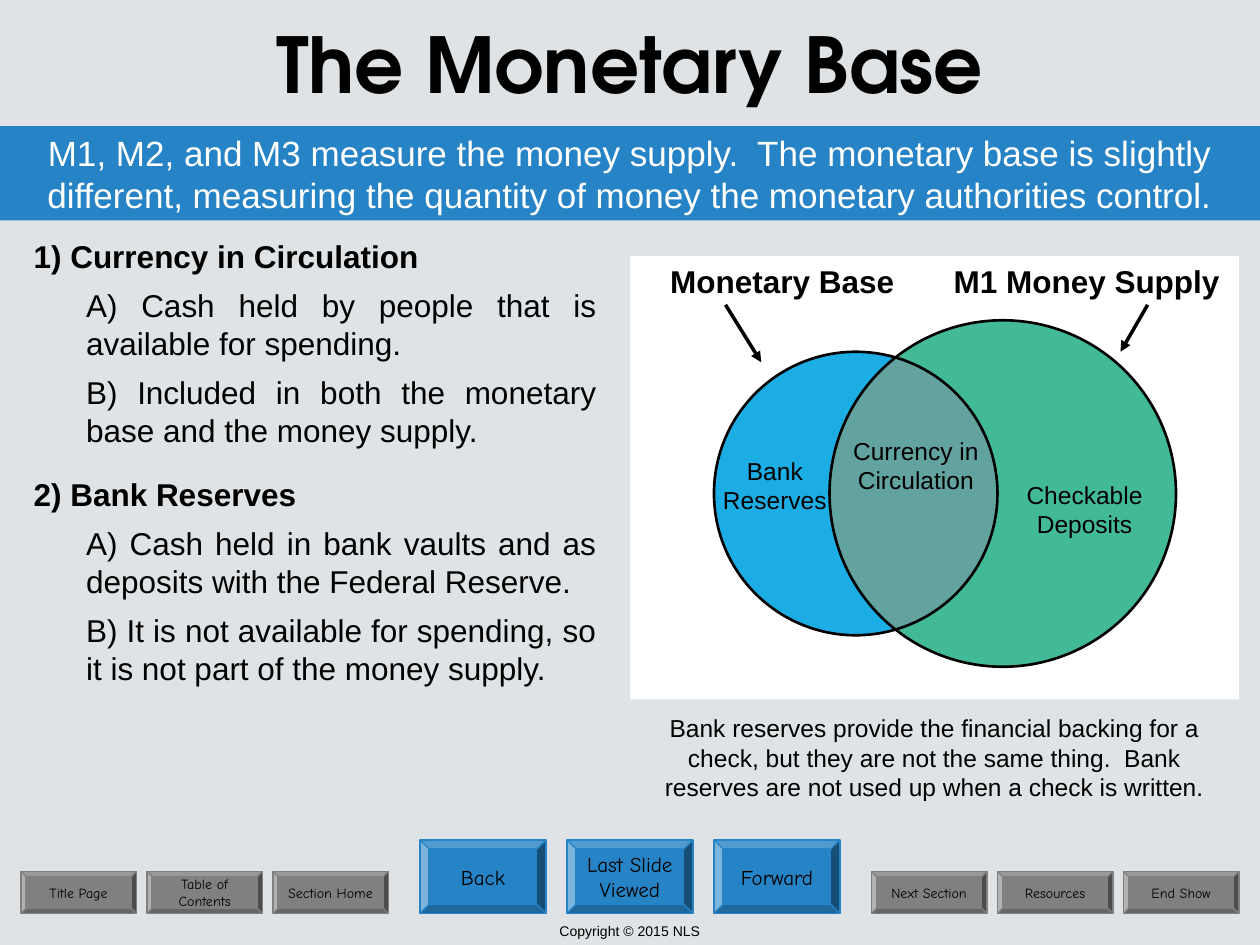
from math import acos, cos, sin

from lxml.etree import SubElement
from pptx import Presentation
from pptx.dml.color import RGBColor
from pptx.enum.shapes import MSO_CONNECTOR, MSO_SHAPE
from pptx.enum.text import MSO_ANCHOR, MSO_AUTO_SIZE, PP_ALIGN
from pptx.oxml.ns import qn
from pptx.util import Pt

BACKGROUND = RGBColor(0xDF, 0xE3, 0xE5)
BLUE = RGBColor(0x26, 0x83, 0xC6)
GRAY = RGBColor(0x80, 0x80, 0x80)
BLACK = RGBColor(0, 0, 0)
WHITE = RGBColor(0xFF, 0xFF, 0xFF)
RESERVES_BLUE = RGBColor(0x1C, 0xAD, 0xE4)
DEPOSITS_GREEN = RGBColor(0x42, 0xBA, 0x97)
OVERLAP_TEAL = RGBColor(0x62, 0xA3, 0x9F)

# Content
TITLE = "The Monetary Base"
BANNER = ("M1, M2, and M3 measure the money supply.  The monetary base is slightly "
          "different, measuring the quantity of money the monetary authorities control.")
SECTIONS = [
    ("1) Currency in Circulation",
     ["A) Cash held by people that is available for spending.",
      "B) Included in both the monetary base and the money supply."]),
    ("2) Bank Reserves",
     ["A) Cash held in bank vaults and as deposits with the Federal Reserve.",
      "B) It is not available for spending, so it is not part of the money supply."]),
]
CAPTION = ("Bank reserves provide the financial backing for a check, but they are not the "
           "same thing.  Bank reserves are not used up when a check is written.")
COPYRIGHT = "Copyright © 2015 NLS"

# Diagram: (text, left, top, width, height)
HEADINGS = [("Monetary Base", 360, 146.2, 174, 29),
            ("M1 Money Supply", 534, 146.2, 174, 29)]
LABELS = [("Bank Reserves", 396, 257, 93.6, 41),
          ("Checkable Deposits", 573, 270.7, 93.6, 41),
          ("Currency in Circulation", 476.6, 245.5, 93.6, 41)]
CENTER_Y = 282
CIRCLES = [(489, 81, RESERVES_BLUE), (573, 99, DEPOSITS_GREEN)]  # centre x, radius, fill
ARROWS = [(414.6, 174.2, 435, 207), (655.8, 174.2, 640.3, 201)]

# Navigation: look of the buttons, then groups of (first left, labels)
SMALL = {"top": 498, "width": 66, "height": 24, "pitch": 72, "color": GRAY, "size": Pt(8)}
LARGE = {"top": 480, "width": 72, "height": 42, "pitch": 84, "color": BLUE, "size": Pt(12)}
BUTTON_GROUPS = [
    (LARGE, 240, [["Back"], ["Last Slide", "Viewed"], ["Forward"]]),
    (SMALL, 12, [["Title Page"], ["Table of", "Contents"], ["Section Home"]]),
    (SMALL, 498, [["Next Section"], ["Resources"], ["End Show"]]),
]


def set_font(paragraph, **changes):
    values = {"name": "Arial", "size": Pt(18), "bold": False, **changes}
    paragraph.font.color.rgb = values.pop("color", BLACK)
    for name, value in values.items():
        setattr(paragraph.font, name, value)


def write(frame, lines, wrap=True, anchor=MSO_ANCHOR.TOP, **font):
    frame.word_wrap = wrap
    frame.auto_size = MSO_AUTO_SIZE.NONE
    frame.vertical_anchor = anchor
    for index, line in enumerate(lines):
        paragraph = frame.add_paragraph() if index else frame.paragraphs[0]
        paragraph.text = line
        paragraph.alignment = PP_ALIGN.CENTER
        set_font(paragraph, **font)


def place(shape, left, top, width, height):
    shape.left, shape.top, shape.width, shape.height = map(Pt, (left, top, width, height))


def paint(shape, fill=None, line=None, line_width=1.5):
    shape.shadow.inherit = False
    if fill is None:
        shape.fill.background()
    else:
        shape.fill.solid()
        shape.fill.fore_color.rgb = fill
    if line is None:
        shape.line.fill.background()
    else:
        shape.line.color.rgb = line
        shape.line.width = Pt(line_width)


def add_shape(slide, kind, box, **look):
    shape = slide.shapes.add_shape(kind, *map(Pt, box))
    paint(shape, **look)
    return shape


def add_text(slide, text, box, **font):
    write(slide.shapes.add_textbox(*map(Pt, box)).text_frame, [text], **font)


def add_buttons(slide):
    for look, first_left, labels in BUTTON_GROUPS:
        for index, lines in enumerate(labels):
            box = (first_left + index * look["pitch"], look["top"], look["width"], look["height"])
            button = add_shape(slide, MSO_SHAPE.BEVEL, box, fill=look["color"],
                               line=look["color"], line_width=0.75)
            write(button.text_frame, lines, wrap=False, anchor=MSO_ANCHOR.MIDDLE,
                  name="Comic Neue", size=look["size"])


def add_sections(body):
    place(body, 12, 132, 336, 264)
    frame = body.text_frame
    frame.auto_size = MSO_AUTO_SIZE.NONE
    frame.vertical_anchor = MSO_ANCHOR.TOP
    lines = [(text, level) for heading, points in SECTIONS
             for text, level in [(heading, 0)] + [(point, 1) for point in points]]
    for index, (text, level) in enumerate(lines):
        paragraph = frame.add_paragraph() if index else frame.paragraphs[0]
        paragraph.text = text
        paragraph.level = level
        properties = paragraph._p.get_or_add_pPr()
        properties.set("marL", str(Pt(30 * level)))
        properties.set("indent", "0")
        SubElement(properties, qn("a:buNone"))
        paragraph.alignment = PP_ALIGN.JUSTIFY
        paragraph.line_spacing = 1.0
        paragraph.space_before = Pt((6.5 if level else 15) if index else 0)
        set_font(paragraph, bold=level == 0)


def add_overlap(slide):
    # The lens is bounded by one arc of each circle
    (left_x, left_radius, _), (right_x, right_radius, _) = CIRCLES
    distance = right_x - left_x
    chord = (distance ** 2 + left_radius ** 2 - right_radius ** 2) / (2 * distance)
    left_angle = acos(chord / left_radius)
    right_angle = acos((distance - chord) / right_radius)
    steps = [index / 30 - 1 for index in range(61)]
    points = [(left_x + left_radius * cos(left_angle * step),
               CENTER_Y + left_radius * sin(left_angle * step)) for step in steps]
    points += [(right_x - right_radius * cos(right_angle * step),
                CENTER_Y - right_radius * sin(right_angle * step)) for step in steps]
    points = [(Pt(x), Pt(y)) for x, y in points]
    builder = slide.shapes.build_freeform(*points[0])
    builder.add_line_segments(points[1:], close=True)
    paint(builder.convert_to_shape(), fill=OVERLAP_TEAL)


def add_arrow(slide, ends):
    arrow = slide.shapes.add_connector(MSO_CONNECTOR.STRAIGHT, *map(Pt, ends))
    arrow.line.color.rgb = BLACK
    arrow.line.width = Pt(2)
    SubElement(arrow.line._get_or_add_ln(), qn("a:tailEnd"), type="triangle")
    SubElement(arrow._element.spPr, qn("a:effectLst"))


def add_diagram(slide):
    add_shape(slide, MSO_SHAPE.RECTANGLE, (360, 146.2, 348, 253.4), fill=WHITE)
    circles = [((x - radius, CENTER_Y - radius, 2 * radius, 2 * radius), color)
               for x, radius, color in CIRCLES]
    for box, color in circles:
        add_shape(slide, MSO_SHAPE.OVAL, box, fill=color)
    add_overlap(slide)
    for box, _ in reversed(circles):
        add_shape(slide, MSO_SHAPE.OVAL, box, line=BLACK)
    for text, *box in HEADINGS:
        add_text(slide, text, box, bold=True)
    for text, *box in LABELS:
        add_text(slide, text, box, size=Pt(14))
    for ends in ARROWS:
        add_arrow(slide, ends)


def main():
    presentation = Presentation()
    presentation.slide_width, presentation.slide_height = Pt(720), Pt(540)
    slide = presentation.slides.add_slide(presentation.slide_layouts[1])
    slide.background.fill.solid()
    slide.background.fill.fore_color.rgb = BACKGROUND

    # Title and banner
    title = slide.shapes.title
    place(title, 0, 0, 720, 72)
    write(title.text_frame, [TITLE], anchor=MSO_ANCHOR.MIDDLE,
          name="TeX Gyre Adventor", size=Pt(44), bold=True)
    banner = add_shape(slide, MSO_SHAPE.RECTANGLE, (0, 72, 720, 54), fill=BLUE)
    write(banner.text_frame, [BANNER], anchor=MSO_ANCHOR.MIDDLE, size=Pt(20), color=WHITE)

    # Main area
    add_sections(slide.placeholders[1])
    add_diagram(slide)
    add_text(slide, CAPTION, (360, 404, 348, 58), size=Pt(14))

    # Footer
    add_buttons(slide)
    add_text(slide, COPYRIGHT, (0, 523.4, 720, 16.6), size=Pt(8))
    presentation.save("out.pptx")


if __name__ == "__main__":
    main()
